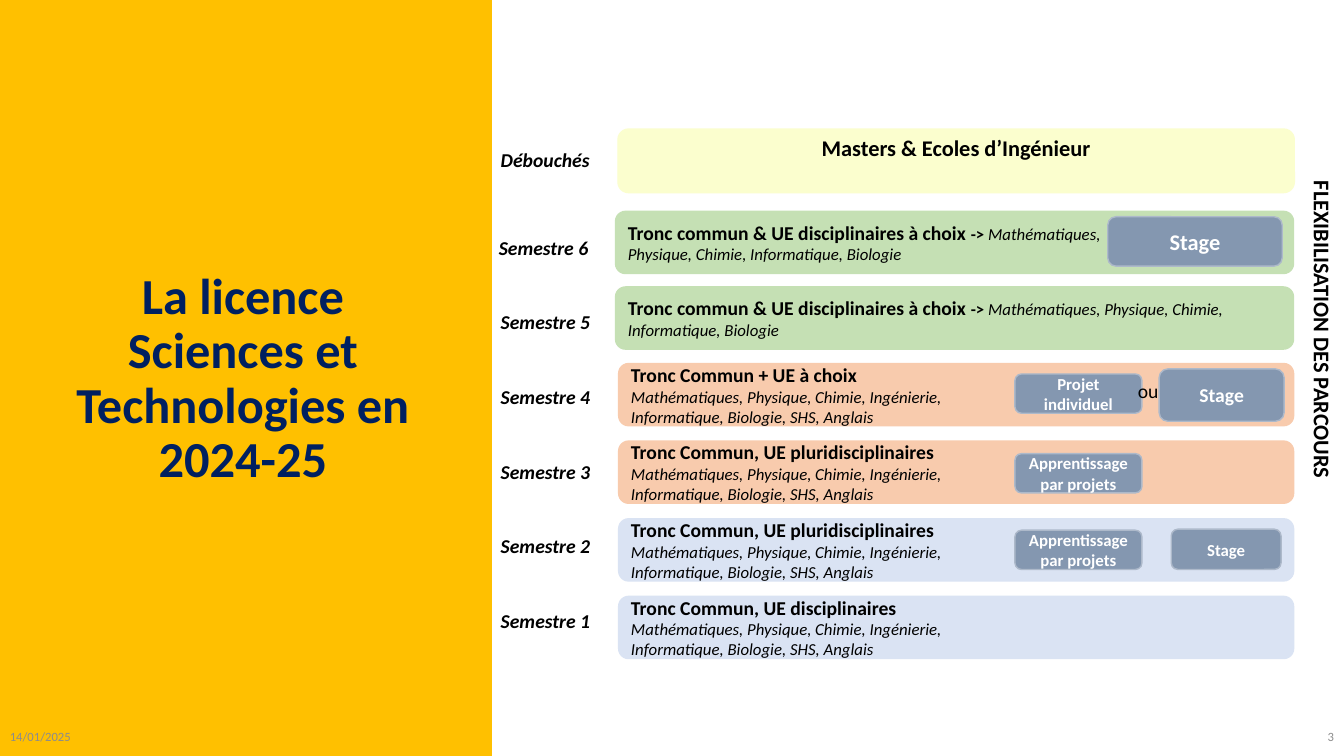
from pptx import Presentation
from pptx.dml.color import RGBColor
from pptx.enum.shapes import MSO_SHAPE as Preset
from pptx.enum.text import MSO_ANCHOR as Anchor, MSO_AUTO_SIZE as Fit, PP_ALIGN as Align
from pptx.util import Pt

GOLD = RGBColor(0xFF, 0xC0, 0x00)
NAVY = RGBColor(0x00, 0x20, 0x60)
BLUE = RGBColor(0xDA, 0xE3, 0xF3)
PEACH = RGBColor(0xF8, 0xCB, 0xAD)
GREEN = RGBColor(0xC5, 0xE0, 0xB4)
CREAM = RGBColor(0xFB, 0xFE, 0xCE)
SLATE = RGBColor(0x84, 0x97, 0xB0)
MIST = RGBColor(0xAD, 0xB9, 0xCA)
GREY = RGBColor(0x8C, 0x8C, 0x8C)
BLACK = RGBColor(0, 0, 0)
WHITE = RGBColor(0xFF, 0xFF, 0xFF)

FONT = "Calibri"
BAND_HEIGHT = 45.4
BAND_RIGHT = 924.5
LABEL_STEP = 53.3

HEAD = {"size": 14, "bold": True}
ARROW = {"size": 12, "bold": True}
SUBJECT = {"size": 12, "italic": True}
LABEL = {"size": 14, "bold": True, "italic": True}

CHOICE = [("Tronc commun & UE disciplinaires à choix ", HEAD), ("-> ", ARROW)]
SUBJECTS = [
    [("Mathématiques, Physique, Chimie, Ingénierie,", SUBJECT)],
    [("Informatique, Biologie, SHS, Anglais", SUBJECT)],
]

BANDS = [
    (441.4, 425.5, BLUE, [[("Tronc Commun, UE disciplinaires", HEAD)]] + SUBJECTS),
    (441.4, 370.1, BLUE, [[("Tronc Commun, UE pluridisciplinaires", HEAD)]] + SUBJECTS),
    (441.4, 314.6, PEACH, [[("Tronc Commun, UE pluridisciplinaires", HEAD)]] + SUBJECTS),
    (441.4, 259.2, PEACH, [[("Tronc Commun + UE à choix", HEAD)]] + SUBJECTS),
    (439.2, 204.5, GREEN, [
        CHOICE + [("Mathématiques, Physique, Chimie, Informatique, Biologie", SUBJECT)]]),
    (439.2, 150.5, GREEN, [
        CHOICE + [("Mathématiques,", SUBJECT)],
        [("Physique, Chimie, Informatique, Biologie", SUBJECT)]]),
]

BADGES = [
    ("Projet individuel", 725, 267.1, 90.7, 28.1, 12),
    ("Apprentissage par projets", 725, 324, 90.7, 28.1, 12),
    ("Apprentissage par projets", 725, 378.7, 90.7, 28.1, 12),
    ("Stage", 828, 263.5, 89.3, 37.4, 14),
    ("Stage", 836.6, 378, 78.5, 28.8, 12),
    ("Stage", 791.3, 154.8, 124.6, 35.3, 16),
]

LABELS = [(f"Semestre {number}", 349.2 if number == 6 else 350.6,
           431.3 - (number - 1) * LABEL_STEP) for number in range(1, 7)]
LABELS.append(("Débouchés", 350.6, 102.2))

deck = Presentation()
deck.slide_width, deck.slide_height = Pt(960), Pt(540)
page = deck.slides.add_slide(deck.slide_layouts[6])


def write(box, paragraphs, color=BLACK, align=Align.LEFT, anchor=Anchor.MIDDLE, wrap=True):
    frame = box.text_frame
    frame.word_wrap = wrap
    frame.vertical_anchor = anchor
    for index, pieces in enumerate(paragraphs):
        para = frame.add_paragraph() if index else frame.paragraphs[0]
        para.alignment = align
        for words, style in pieces:
            span = para.add_run()
            span.text = words
            span.font.name = FONT
            span.font.color.rgb = color
            span.font.size = Pt(style["size"])
            span.font.bold = style.get("bold", False)
            span.font.italic = style.get("italic", False)


def add_panel(preset, left, top, width, height, fill, line=None):
    panel = page.shapes.add_shape(preset, Pt(left), Pt(top), Pt(width), Pt(height))
    panel.shadow.inherit = False
    panel.fill.solid()
    panel.fill.fore_color.rgb = fill
    if line is None:
        panel.line.fill.background()
    else:
        panel.line.color.rgb = line
        panel.line.width = Pt(1)
    return panel


def add_text(words, left, top, width, height, style, **options):
    box = page.shapes.add_textbox(Pt(left), Pt(top), Pt(width), Pt(height))
    write(box, [[(words, style)]], **options)
    return box


add_panel(Preset.RECTANGLE, 0, 0, 351.4, 540, GOLD)
title = add_text("La licence Sciences et Technologies en 2024-25", 27.4, 49.7, 292.3, 442.8,
                 {"size": 36, "bold": True}, color=NAVY, align=Align.CENTER)
title.text_frame.paragraphs[0].line_spacing = 0.9

for left, top, fill, paragraphs in BANDS:
    band = add_panel(Preset.ROUNDED_RECTANGLE, left, top, BAND_RIGHT - left, BAND_HEIGHT, fill)
    write(band, paragraphs)

outcome = add_panel(Preset.ROUNDED_RECTANGLE, 441.4, 92.2, BAND_RIGHT - 441.4, BAND_HEIGHT,
                    CREAM, CREAM)
write(outcome, [[("Masters & Ecoles d’Ingénieur", {"size": 16, "bold": True})]],
      align=Align.CENTER)
outcome.text_frame.margin_bottom = Pt(23)

for words, left, top, width, height, size in BADGES:
    badge = add_panel(Preset.ROUNDED_RECTANGLE, left, top, width, height, SLATE, MIST)
    write(badge, [[(words, {"size": size, "bold": True})]], color=WHITE, align=Align.CENTER)

for words, left, top in LABELS:
    label = add_text(words, left, top, 79, 24.2, LABEL, anchor=Anchor.TOP, wrap=False)
    label.text_frame.auto_size = Fit.SHAPE_TO_FIT_TEXT

either = add_text("ou", 805.7, 267.1, 29.5, 24.2, {"size": 14}, anchor=Anchor.TOP, wrap=False)
either.text_frame.auto_size = Fit.SHAPE_TO_FIT_TEXT

banner = add_text("FLEXIBILISATION DES PARCOURS", 817.2, 236.2, 254.9, 26.6,
                  {"size": 16, "bold": True}, anchor=Anchor.TOP)
banner.rotation = 90

add_text("14/01/2025", 0, 511.9, 216, 28.8, {"size": 9}, color=GREY)
add_text("3", 744, 511.9, 216, 28.8, {"size": 9}, color=GREY, align=Align.RIGHT)

deck.save("out.pptx")
